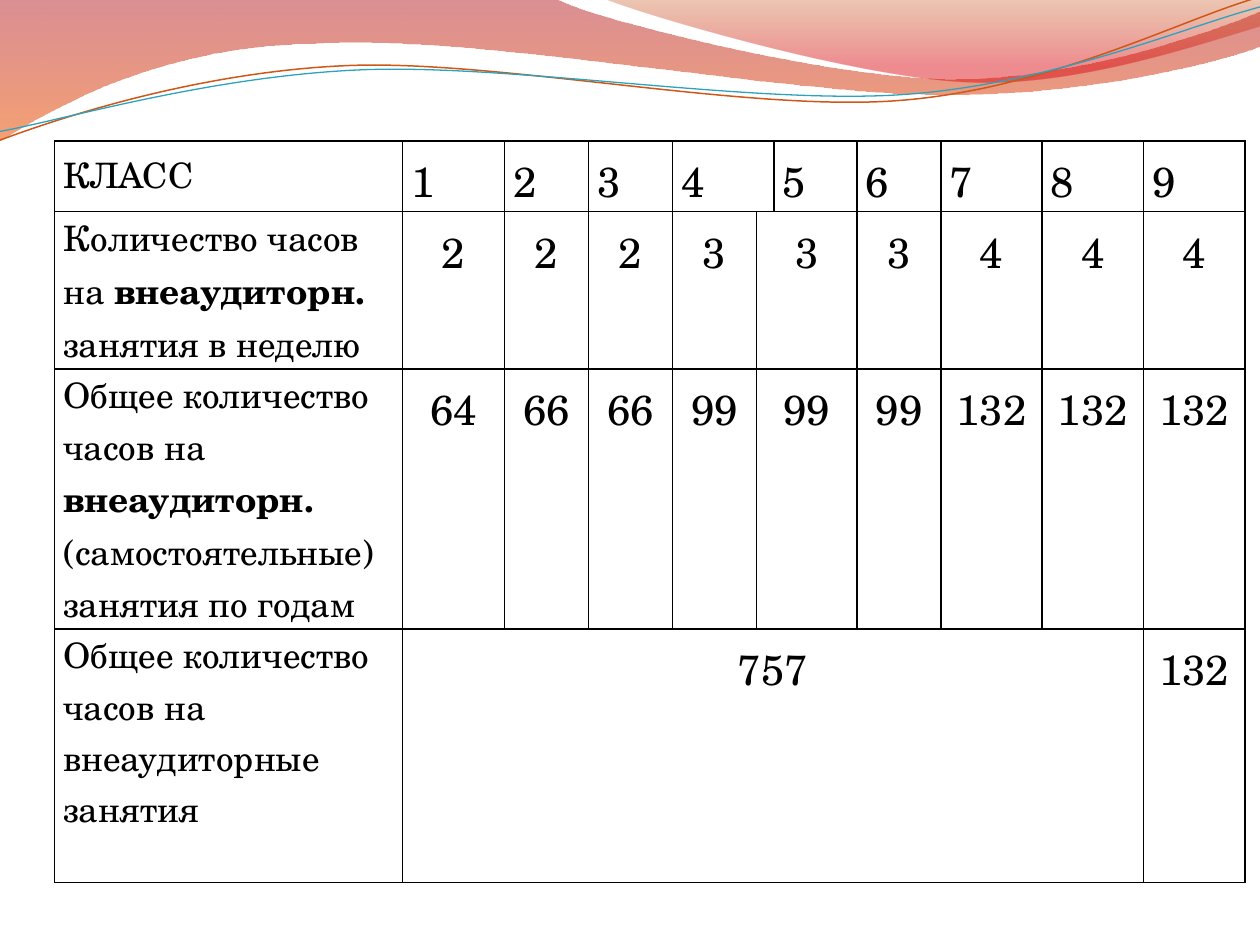
from dataclasses import dataclass

from lxml.etree import SubElement
from pptx import Presentation
from pptx.dml.color import RGBColor as RGB
from pptx.enum.text import PP_ALIGN as Align
from pptx.oxml.ns import qn
from pptx.util import Pt


@dataclass(frozen=True)
class Theme:
    font: str = "TeX Gyre Schola"
    ink: str = "000000"
    label: int = 20
    number: int = 24
    border: float = 1
    # gradient stops: position, colour, opacity in percent
    band: tuple = ((0, "AF0911", 45), (1, "EE5300", 55))
    accent: tuple = ((0, "C24400", 30), (0.8, "DC000B", 45))
    orange: str = "CF5818"
    teal: str = "2DA2BF"


theme = Theme()


def add_curve(shapes, start, segments, closed):
    """Draw straight segments (one point) and cubic curves (three points) from start."""
    builder = shapes.build_freeform(Pt(start[0]), Pt(start[1]))
    builder.add_line_segments([(Pt(x), Pt(y)) for x, y in (s[-1] for s in segments)],
                              close=closed)
    sp = builder.convert_to_shape()
    sp.shadow.inherit = False
    for node, segment in zip(list(sp._element.iter(qn("a:lnTo"))), segments):
        if len(segment) == 3:
            curve = node.makeelement(qn("a:cubicBezTo"))
            for x, y in segment:
                SubElement(curve, qn("a:pt"), x=str(Pt(x) - sp.left), y=str(Pt(y) - sp.top))
            node.getparent().replace(node, curve)
    return sp


def fill_cell(cell, paragraphs, size, spacing, align):
    """Write paragraphs, each a list of (text, bold) runs, into a cell."""
    tf = cell.text_frame
    for i, runs in enumerate(paragraphs):
        p = tf.add_paragraph() if i else tf.paragraphs[0]
        p.alignment, p.line_spacing = align, spacing
        p.font.name, p.font.size = theme.font, Pt(size)
        p.font.color.rgb = RGB.from_string(theme.ink)
        for text, bold in runs:
            r = p.add_run()
            r.text, r.font.bold = text, bold


prs = Presentation()
prs.slide_width, prs.slide_height = Pt(720), Pt(540)
slide = prs.slides.add_slide(prs.slide_layouts[6])

# Waves at the top
filled_waves = [
    (theme.band, (0, -1), [
        [(317, -1)],
        [(343, 12), (478, 45), (546, 45)],
        [(614, 45), (690, 19), (720, 6.5)],
        [(721, 26)],
        [(708, 32), (626, 55), (537, 54)],
        [(448, 54), (275, 20), (185, 24.5)],
        [(93, 25), (33, 60), (-1, 81)],
    ]),
    (theme.accent, (345, -1), [
        [(366, 8), (491, 45), (554, 47)],
        [(616, 50), (692, 23), (720, 15)],
        [(720, 0)],
    ]),
]
for stops, start, segments in filled_waves:
    sp = add_curve(slide.shapes, start, segments, True)
    sp.line.fill.background()
    sp.fill.gradient()
    sp.fill.gradient_angle = 270
    for stop, (position, color, _) in zip(sp.fill.gradient_stops, stops):
        stop.position = position
        stop.color.rgb = RGB.from_string(color)
    colors = sp._element.spPr.findall(".//" + qn("a:srgbClr"))
    for node, (_, _, opacity) in zip(colors, stops):
        SubElement(node, qn("a:alpha"), val=str(opacity * 1000))

line_waves = [
    (theme.orange, 0.85, (-1.4, 63.1), [
        [(34.2, 51.7), (114.3, 29.4), (199.4, 29.9)],
        [(284.4, 30.5), (425.8, 67.2), (512, 64.7)],
        [(599.2, 62.3), (676, 25.9), (720.6, 15.5)],
    ]),
    (theme.teal, 0.75, (-1.1, 58.1), [
        [(33.2, 53.7), (118.2, 32.6), (204.3, 32.7)],
        [(290.4, 32.7), (429.1, 63.3), (515.3, 61.4)],
        [(601.5, 59.4), (678.9, 30), (721.4, 21)],
    ]),
]
group = slide.shapes.add_group_shape()
for color, width, start, segments in line_waves:
    sp = add_curve(group.shapes, start, segments, False)
    sp.rotation = 357.3
    sp.fill.background()
    sp.line.color.rgb = RGB.from_string(color)
    sp.line.width = Pt(width)

# Table of hours by class
widths = [198.8, 58.2, 48, 48, 48, 10, 47.6, 48, 57.8, 57.8, 58]
heights = [26, 78.5, 131, 26.6, 104.4]
frame = slide.shapes.add_table(len(heights), len(widths), Pt(31.25), Pt(80.5),
                               Pt(sum(widths)), Pt(sum(heights)))
table = frame.table
table.first_row = table.horz_banding = False
for column, width in zip(table.columns, widths):
    column.width = Pt(width)
for row, height in zip(table.rows, heights):
    row.height = Pt(height)

for cell in table.iter_cells():
    cell.margin_left = cell.margin_right = Pt(5)
    cell.margin_top = cell.margin_bottom = 0
    tc_pr = cell._tc.get_or_add_tcPr()
    for side in ("lnL", "lnR", "lnT", "lnB"):
        ln = SubElement(tc_pr, qn("a:" + side), w=str(Pt(theme.border)))
        SubElement(SubElement(ln, qn("a:solidFill")), qn("a:srgbClr"), val=theme.ink)
    cell.fill.background()

# A narrow helper column lets the border between 4 and 5 shift below the header
for first, last in [((0, 4), (0, 5)), ((1, 5), (1, 6)), ((2, 5), (2, 6)),
                    ((3, 0), (4, 0)), ((3, 1), (3, 9)), ((4, 1), (4, 9))]:
    table.cell(*first).merge(table.cell(*last))
# The last two rows read as one: no border between them
for column in range(1, len(widths)):
    for row, side in ((3, "lnB"), (4, "lnT")):
        ln = table.cell(row, column)._tc.tcPr.find(qn("a:" + side))
        ln.remove(ln[0])
        SubElement(ln, qn("a:noFill"))

labels = [
    [[("КЛАСС", False)]],
    [[("Количество часов на ", False), ("внеаудиторн.", True)],
     [("занятия в неделю", False)]],
    [[("Общее количество", False)],
     [("часов на ", False), ("внеаудиторн.", True)],
     [("(самостоятельные) занятия по годам", False)]],
    [[("Общее количество", False)],
     [("часов на внеаудиторные занятия", False)]],
]
numbers = [
    range(1, 10),
    [2, 2, 2, 3, 3, 3, 4, 4, 4],
    [64, 66, 66, 99, 99, 99, 132, 132, 132],
    [757, 132],
]
for i, (label, values) in enumerate(zip(labels, numbers)):
    header = i == 0
    fill_cell(table.cell(i, 0), label, theme.label, 1.15 if header else 1, Align.LEFT)
    open_cells = [c for c in list(table.rows[i].cells)[1:] if not c.is_spanned]
    for cell, value in zip(open_cells, values):
        fill_cell(cell, [[(str(value), False)]], theme.number, 1.15,
                  Align.LEFT if header else Align.CENTER)

prs.save("out.pptx")
